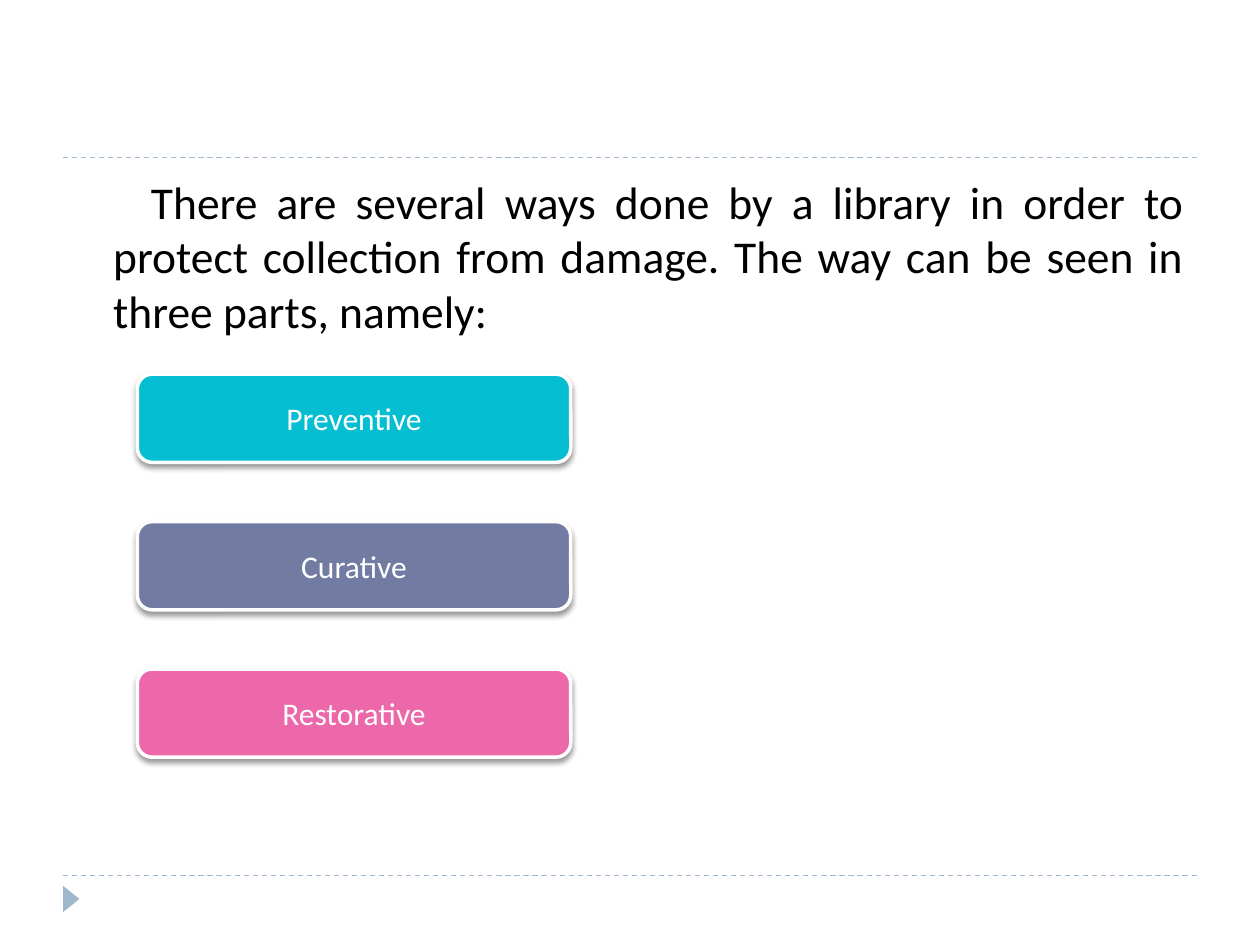
import pptx
import pptx.dml.color
import pptx.enum.dml
import pptx.enum.shapes
import pptx.enum.text
import pptx.oxml
import pptx.oxml.ns
import pptx.util
from pptx.util import Inches

COLORS = {
    "accent": "9FB8CD",
    "text": "000000",
    "white": "FFFFFF",
    "preventive": "05BED1",
    "curative": "727CA3",
    "restorative": "EC68AA",
}
NAMESPACE = pptx.oxml.ns.nsdecls("a")
SHADOW = (
    f'<a:effectLst {NAMESPACE}><a:outerShdw blurRad="38100" dist="25400" dir="5400000" '
    'rotWithShape="0"><a:srgbClr val="000000"><a:alpha val="40000"/></a:srgbClr>'
    "</a:outerShdw></a:effectLst>"
)


def rgb(name):
    return pptx.dml.color.RGBColor.from_string(COLORS[name])


class SlideBuilder:
    font_name = "Calibri"

    def __init__(self, slide):
        self.slide = slide

    def style_paragraph(self, paragraph, size, color, alignment):
        paragraph.alignment = alignment
        paragraph.font.name = self.font_name
        paragraph.font.size = pptx.util.Pt(size)
        paragraph.font.color.rgb = rgb(color)

    def add_rule(self, top):
        connector = self.slide.shapes.add_connector(
            pptx.enum.shapes.MSO_CONNECTOR.STRAIGHT,
            Inches(0.5), Inches(top), Inches(9.5), Inches(top))
        connector.line.color.rgb = rgb("accent")
        connector.line.width = pptx.util.Pt(0.75)
        connector.line.dash_style = pptx.enum.dml.MSO_LINE.DASH
        connector._element.spPr.append(pptx.oxml.parse_xml(f"<a:effectLst {NAMESPACE}/>"))

    def add_marker(self, left, top, width, height):
        shape = self.slide.shapes.add_shape(
            pptx.enum.shapes.MSO_SHAPE.ISOSCELES_TRIANGLE,
            Inches(left), Inches(top), Inches(width), Inches(height))
        shape.rotation = 90
        shape.shadow.inherit = False
        shape.fill.solid()
        shape.fill.fore_color.rgb = rgb("accent")
        shape.line.fill.background()

    def add_body(self, text, left, top, width, height):
        box = self.slide.shapes.add_textbox(
            Inches(left), Inches(top), Inches(width), Inches(height))
        box.text_frame.word_wrap = True
        paragraph = box.text_frame.paragraphs[0]
        paragraph.text = text
        self.style_paragraph(paragraph, 26, "text", pptx.enum.text.PP_ALIGN.JUSTIFY)
        paragraph.space_before = pptx.util.Pt(6)
        # Left margin and first-line indent
        properties = paragraph._p.get_or_add_pPr()
        properties.set("marL", str(Inches(0.3)))
        properties.set("indent", str(Inches(0.3)))

    def add_card(self, text, color, left, top, width, height):
        shape = self.slide.shapes.add_shape(
            pptx.enum.shapes.MSO_SHAPE.ROUNDED_RECTANGLE,
            Inches(left), Inches(top), Inches(width), Inches(height))
        shape.fill.solid()
        shape.fill.fore_color.rgb = rgb(color)
        shape.line.color.rgb = rgb("white")
        shape.line.width = pptx.util.Pt(2)
        shape._element.spPr.append(pptx.oxml.parse_xml(SHADOW))
        shape.text_frame.vertical_anchor = pptx.enum.text.MSO_ANCHOR.MIDDLE
        paragraph = shape.text_frame.paragraphs[0]
        paragraph.text = text
        self.style_paragraph(paragraph, 18, "white", pptx.enum.text.PP_ALIGN.CENTER)


def main():
    presentation = pptx.Presentation()
    presentation.slide_width = Inches(10)
    presentation.slide_height = Inches(7.5)
    slide = presentation.slides.add_slide(presentation.slide_layouts[6])
    builder = SlideBuilder(slide)

    # Frame: dashed rules and footer marker
    for top in (6.95, 1.25):
        builder.add_rule(top)
    builder.add_marker(0.46, 7.07, 0.21, 0.13)

    # Introduction
    builder.add_body(
        "There are several ways done by a library in order to protect collection "
        "from damage. The way can be seen in three parts, namely:",
        0.5, 1.33, 9, 5.4)

    # Three ways, evenly spaced
    for index, way in enumerate(("Preventive", "Curative", "Restorative")):
        builder.add_card(way, way.lower(), 1.09, 2.97 + 1.17 * index, 3.44, 0.7)

    presentation.save("out.pptx")


if __name__ == "__main__":
    main()
